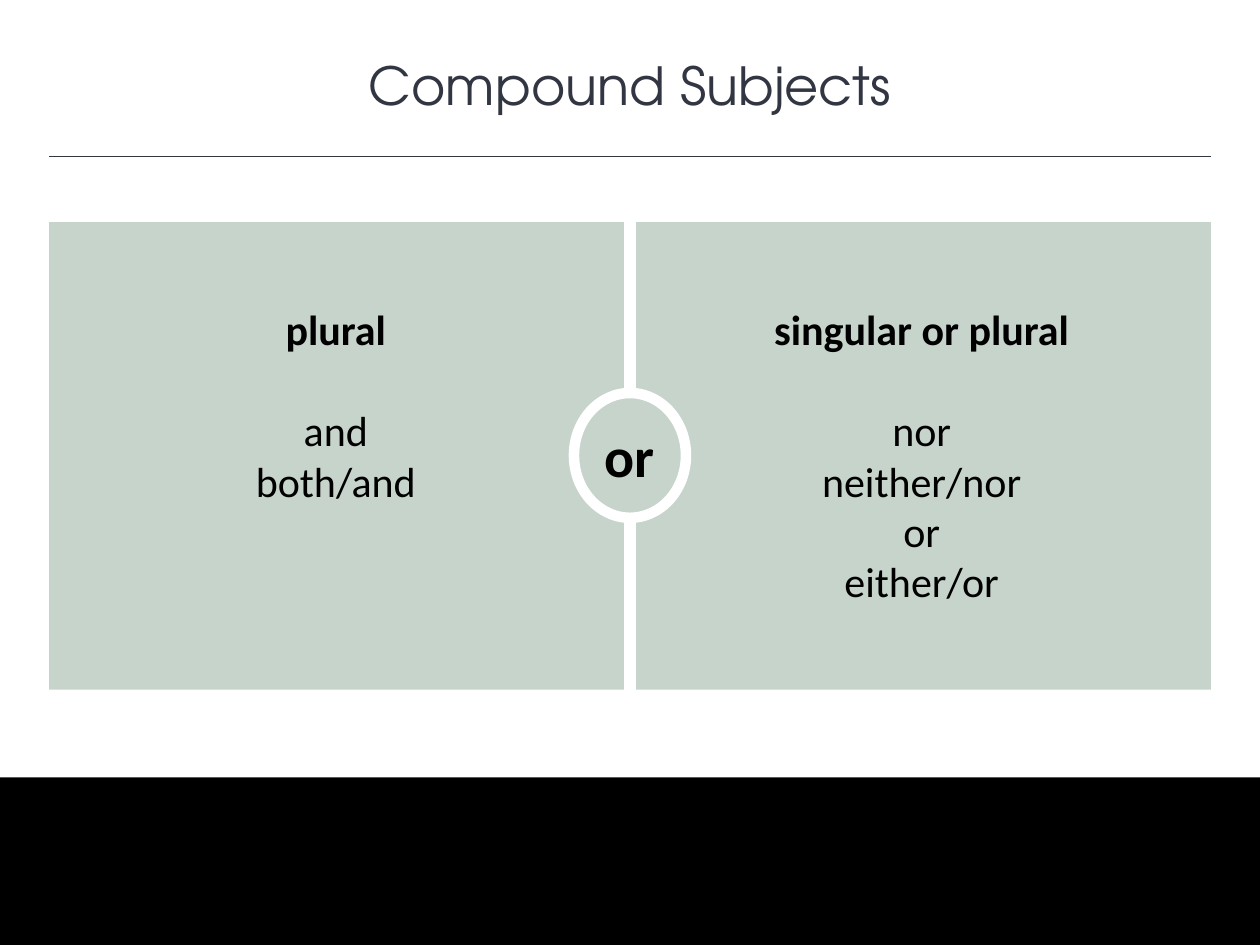
"""Build the slide on number agreement with compound subjects."""
import pptx
import pptx.util
import pptx.dml.color
import pptx.enum.shapes
import pptx.enum.text
import lxml.etree

Pt = pptx.util.Pt
Rgb = pptx.dml.color.RGBColor.from_string
Kind = pptx.enum.shapes.MSO_SHAPE
Text = pptx.enum.text
hues = {"ink": "323542", "sage": "C7D4CB", "black": "000000", "white": "FFFFFF"}

deck = pptx.Presentation()
deck.slide_width, deck.slide_height = Pt(720), Pt(540)
slide = deck.slides.add_slide(deck.slide_layouts[6])
shapes = slide.shapes


def block(kind, left, top, width, height, hue):
    shape = shapes.add_shape(kind, Pt(left), Pt(top), Pt(width), Pt(height))
    shape.shadow.inherit = False
    shape.fill.solid()
    shape.fill.fore_color.rgb = Rgb(hues[hue])
    shape.line.fill.background()
    return shape


def write(shape, lines, face, size, hue, anchor, wrap=True):
    frame = shape.text_frame
    form = {"word_wrap": wrap, "vertical_anchor": anchor}
    for name, value in form.items():
        setattr(frame, name, value)
    for num, (words, bold, gap) in enumerate(lines):
        para = frame.paragraphs[0] if num == 0 else frame.add_paragraph()
        para.alignment = Text.PP_ALIGN.CENTER
        if gap:
            para.space_before = Pt(gap)
        run = para.add_run()
        run.text = words
        form = {"name": face, "size": Pt(size), "bold": bold}
        for name, value in form.items():
            setattr(run.font, name, value)
        run.font.color.rgb = Rgb(hues[hue])


top, middle = Text.MSO_ANCHOR.TOP, Text.MSO_ANCHOR.MIDDLE
edge, wide, gap = 28, 328.5, 7

title = shapes.add_textbox(0, Pt(26.64), Pt(720), Pt(44))
write(title, [("Compound Subjects", False, 0)], "TeX Gyre Adventor", 30, "ink", top)

block(Kind.RECTANGLE, 0, 444.24, 720, 95.76, "black")

rule = shapes.add_connector(
    pptx.enum.shapes.MSO_CONNECTOR.STRAIGHT, Pt(edge), Pt(89.4), Pt(720 - edge), Pt(89.4)
)
rule.line.color.rgb = Rgb(hues["ink"])
rule.line.width = Pt(1)
props = rule._element.spPr
lxml.etree.SubElement(props, "{http://schemas.openxmlformats.org/drawingml/2006/main}effectLst")

for col in range(2):
    block(Kind.RECTANGLE, edge + col * (wide + gap), 126.9, wide, 267.2, "sage")

badge = block(Kind.OVAL, 328, 224.6, 64, 71.3, "sage")
badge.line.color.rgb = Rgb(hues["white"])
badge.line.width = Pt(6)
write(badge, [("or", True, 0)], "Calibri", 32, "black", middle, False)

cols = [
    ("plural", ["and", "both/and"], 61.2, 123.8),
    ("singular or plural", ["nor", "neither/nor", "or", "either/or"], 396, 181.4),
]
for head, words, left, high in cols:
    box = shapes.add_textbox(Pt(left), Pt(169.2), Pt(261.4), Pt(high))
    lines = [(head, True, 0)]
    lines += [(word, False, 0 if num else 29) for num, word in enumerate(words)]
    write(box, lines, "Calibri", 24, "black", middle)

deck.save("out.pptx")
